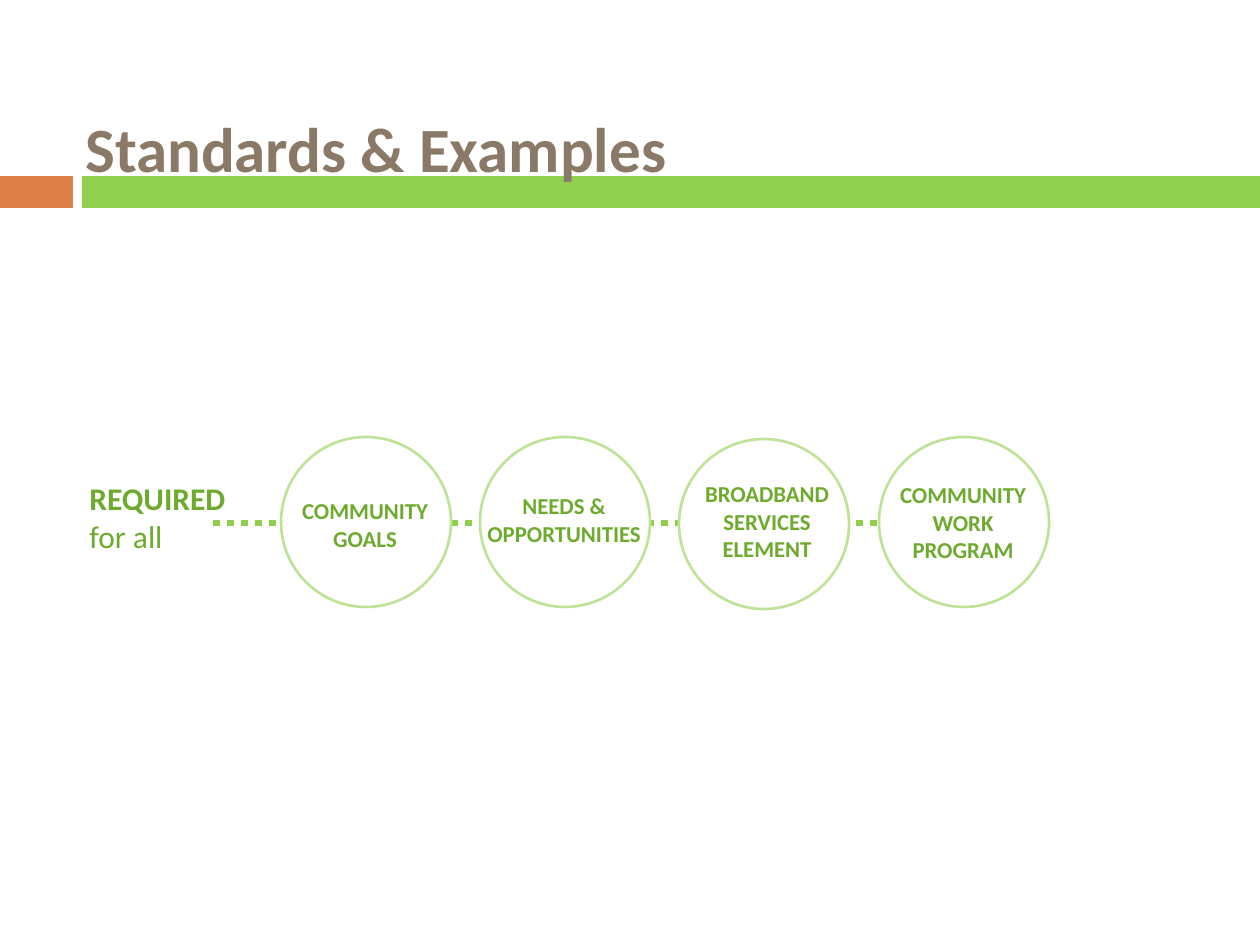
from pptx import Presentation
from pptx.dml.color import RGBColor
from pptx.enum.dml import MSO_LINE_DASH_STYLE as Dash
from pptx.enum.shapes import MSO_CONNECTOR_TYPE as Connector, MSO_SHAPE as Shape
from pptx.enum.text import MSO_ANCHOR as Anchor, PP_ALIGN as Align
from pptx.oxml.ns import qn
from pptx.util import Pt
from lxml.etree import SubElement

SCALE = 914400 / 126
COLORS = {
    "orange": "DD8047", "green": "92D050", "title": "8A7967", "text": "6EAA2E",
    "dots": "8FCF4B", "ring": "BEE396", "white": "FFFFFF",
}
# Lines of text, then offset from the circle's left and top, width and height
STEPS = [
    (["COMMUNITY", "GOALS"], (-5, 54, 178, 68)),
    (["NEEDS &", "OPPORTUNITIES"], (-15, 49, 198, 68)),
    (["BROADBAND SERVICES ELEMENT"], (-1, 37, 178, 96)),
    (["COMMUNITY", "WORK PROGRAM"], (-5, 38, 178, 96)),
]


def px(value):
    return round(value * SCALE)


def color(name):
    return RGBColor.from_string(COLORS[name])


def add_text(page, box, lines, size, ink, align=Align.LEFT, anchor=Anchor.TOP):
    """Add a bold text box with one paragraph per line and return its paragraphs."""
    frame = page.shapes.add_textbox(*map(px, box)).text_frame
    frame.word_wrap = True
    frame.vertical_anchor = anchor
    frame.text = "\n".join(lines)
    for para in frame.paragraphs:
        para.alignment = align
        para.font.name = "Calibri"
        para.font.size = Pt(size)
        para.font.bold = True
        para.font.color.rgb = color(ink)
    return frame.paragraphs


def add_filled(page, kind, box, fill, line=None):
    shape = page.shapes.add_shape(kind, *map(px, box))
    shape.shadow.inherit = False
    shape.fill.solid()
    shape.fill.fore_color.rgb = color(fill)
    if line:
        shape.line.color.rgb = color(line)
        shape.line.width = Pt(1.5)
    else:
        shape.line.fill.background()


def add_header(page, box):
    left, top, width, height = box
    # Two-colour band
    band_top, band_height, accent, gap = top + 113, 32, 73, 9
    bar_left = left + accent + gap
    add_filled(page, Shape.RECTANGLE, (left, band_top, accent, band_height), "orange")
    add_filled(page, Shape.RECTANGLE,
               (bar_left, band_top, width - accent - gap, band_height), "green")
    # Title
    add_text(page, (left + 73, top, 1081, height), ["Standards & Examples"],
             36, "title", anchor=Anchor.MIDDLE)


def add_dotted_line(page, left, right, y):
    line = page.shapes.add_connector(Connector.STRAIGHT, px(left), px(y), px(right), px(y))
    line.line.color.rgb = color("dots")
    line.line.width = Pt(4)
    line.line.dash_style = Dash.ROUND_DOT
    SubElement(line._element.spPr, qn("a:effectLst"))


def add_chain(page, box):
    left, top, width, height = box
    # Row label
    label = add_text(page, (left, top + 36, 189, 89), ["REQUIRED", "for all"], 18, "text")
    label[1].font.bold = False

    # Line behind the circles
    add_dotted_line(page, left + 136, left + 850, top + height // 2)

    # Evenly spaced circles with captions
    diameter, first = 170, left + 204
    span = left + width - diameter - first
    for index, (lines, (dx, dy, text_width, text_height)) in enumerate(STEPS):
        x = first + span * index // (len(STEPS) - 1)
        drop = 2 if index == 2 else 0  # the third circle sits slightly lower
        add_filled(page, Shape.OVAL, (x, top + drop, diameter, diameter), "white", "ring")
        add_text(page, (x + dx, top + dy, text_width, text_height),
                 lines, 13, "text", Align.CENTER)


def main():
    deck = Presentation()
    deck.slide_width, deck.slide_height = px(1260), px(945)
    page = deck.slides.add_slide(deck.slide_layouts[6])
    add_header(page, (0, 63, 1260, 168))
    add_chain(page, (77, 437, 972, 172))
    deck.save("out.pptx")


if __name__ == "__main__":
    main()
